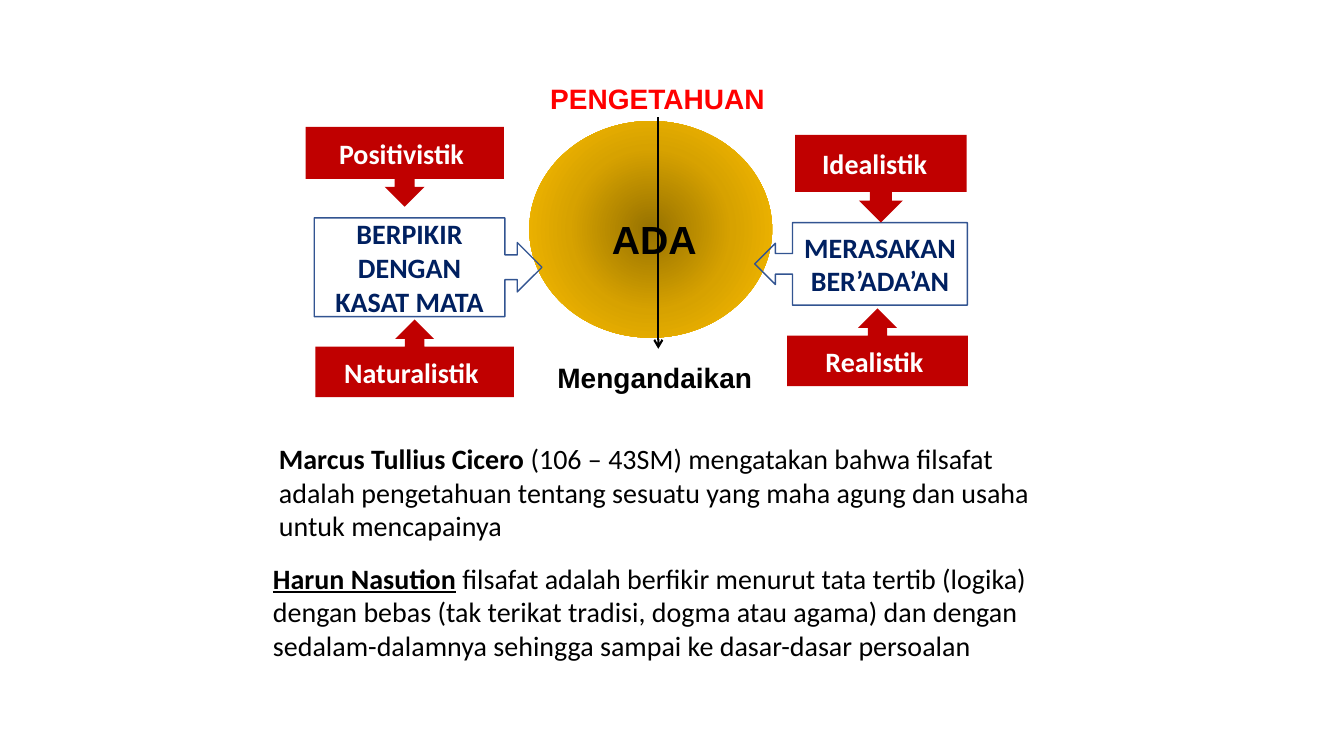
from lxml import etree
from pptx import Presentation
from pptx.dml.color import RGBColor
from pptx.enum.shapes import MSO_CONNECTOR, MSO_SHAPE
from pptx.enum.text import MSO_ANCHOR, PP_ALIGN
from pptx.oxml.ns import qn
from pptx.util import Cm, Pt

UP, DOWN = MSO_SHAPE.UP_ARROW_CALLOUT, MSO_SHAPE.DOWN_ARROW_CALLOUT
LEFT, RIGHT = MSO_SHAPE.LEFT_ARROW_CALLOUT, MSO_SHAPE.RIGHT_ARROW_CALLOUT
OVAL, STRAIGHT = MSO_SHAPE.OVAL, MSO_CONNECTOR.STRAIGHT
MIDDLE = MSO_ANCHOR.MIDDLE
ALIGN_LEFT, CENTER = PP_ALIGN.LEFT, PP_ALIGN.CENTER

COLORS = {
    "black": "000000",
    "white": "FFFFFF",
    "title": "FF0000",
    "school": "C00000",
    "thought": "002060",
    "outline": "325491",
}
SUN_STOPS = [(0, "977200"), (50, "D7A200"), (100, "FFC000")]

# Boxes are left, top, width, height in centimetres.
QUOTES = [
    ((6.63, 14.02, 19.56, 2.82), "Harun Nasution",
     " filsafat adalah berfikir menurut tata tertib (logika) dengan bebas "
     "(tak terikat tradisi, dogma atau agama) dan dengan sedalam-dalamnya "
     "sehingga sampai ke dasar-dasar persoalan", True),
    ((6.78, 11, 19.56, 2.82), "Marcus Tullius Cicero",
     " (106 – 43SM) mengatakan bahwa filsafat adalah pengetahuan tentang "
     "sesuatu yang maha agung dan usaha untuk mencapainya", False),
]
SUN_BOX = (13.34, 3.05, 6.12, 5.46)
AXIS_X, AXIS_TOP, AXIS_BOTTOM = 16.59, 2.95, 8.79
LABELS = [
    ((9.8, 1.93, 13.54, 1.12), "PENGETAHUAN", 20, "title"),
    ((13.74, 8.97, 5.72, 1.12), "Mengandaikan ", 20, "black"),
    ((13.03, 5.31, 7.16, 1.45), "ADA ", 28, "black"),
]
THOUGHTS = [
    (RIGHT, (7.92, 5.49, 5.74, 2.49), "BERPIKIR DENGAN KASAT MATA", 0.837),
    (LEFT, (19.02, 5.61, 5.36, 2.08), "MERASAKAN BER’ADA’AN", 0.822),
]
SCHOOLS = [
    (UP, (19.84, 7.77, 4.55, 1.96), "Realistik "),
    (UP, (7.95, 8.05, 5, 1.96), "Naturalistik "),
    (DOWN, (7.7, 3.2, 5, 2.01), "Positivistik "),
    (DOWN, (20.04, 3.4, 4.32, 2.21), "Idealistik  "),
]


def rgb(name):
    return RGBColor.from_string(COLORS[name])


def to_cm(box):
    return [Cm(length) for length in box]


def write(shape, text, size=20, font="Calibri", color="black", bold=True,
          underline=False, align=CENTER):
    """Add a formatted run to the first paragraph of a shape."""
    shape.text_frame.word_wrap = True
    paragraph = shape.text_frame.paragraphs[0]
    paragraph.alignment = align
    run = paragraph.add_run()
    run.text = text
    run.font.size = Pt(size)
    run.font.name = font
    run.font.bold = bold
    run.font.underline = underline
    run.font.color.rgb = rgb(color)


def add_plain_shape(slide, kind, box, fill=None, line=None):
    shape = slide.shapes.add_shape(kind, *to_cm(box))
    shape.shadow.inherit = False
    shape.text_frame.vertical_anchor = MIDDLE
    if fill:
        shape.fill.solid()
        shape.fill.fore_color.rgb = rgb(fill)
    else:
        shape.fill.background()
    if line:
        shape.line.color.rgb = rgb(line)
        shape.line.width = Pt(1)
    else:
        shape.line.fill.background()
    return shape


def add_sun(slide):
    """Draw the ellipse with a gradient that spreads from its centre."""
    sun = add_plain_shape(slide, OVAL, SUN_BOX)
    sun.fill.gradient()
    gradient = sun._element.spPr.find(qn("a:gradFill"))
    for child in list(gradient):
        gradient.remove(child)
    stops = etree.SubElement(gradient, qn("a:gsLst"))
    for percent, color in SUN_STOPS:
        stop = etree.SubElement(stops, qn("a:gs"), pos=str(percent * 1000))
        etree.SubElement(stop, qn("a:srgbClr"), val=color)
    circle = etree.SubElement(gradient, qn("a:path"), path="circle")
    etree.SubElement(circle, qn("a:fillToRect"),
                     {side: "50000" for side in "ltrb"})


def add_axis(slide):
    ends = to_cm((AXIS_X, AXIS_TOP, AXIS_X, AXIS_BOTTOM))
    axis = slide.shapes.add_connector(STRAIGHT, *ends)
    axis.line.color.rgb = rgb("black")
    axis.line.width = Pt(1.5)
    etree.SubElement(axis.line._get_or_add_ln(), qn("a:tailEnd"), type="arrow")
    etree.SubElement(axis._element.spPr, qn("a:effectLst"))


def main():
    deck = Presentation()
    deck.slide_width, deck.slide_height = Cm(33.87), Cm(19.05)
    slide = deck.slides.add_slide(deck.slide_layouts[6])

    for box, author, saying, underlined in QUOTES:
        quote = slide.shapes.add_textbox(*to_cm(box))
        write(quote, author, underline=underlined, align=ALIGN_LEFT)
        write(quote, saying, bold=False, align=ALIGN_LEFT)

    add_sun(slide)
    add_axis(slide)
    for box, text, size, color in LABELS:
        label = slide.shapes.add_textbox(*to_cm(box))
        write(label, text, size=size, font="Arial", color=color)

    for kind, box, text, body_share in THOUGHTS:
        thought = add_plain_shape(slide, kind, box, line="outline")
        thought.adjustments[3] = body_share
        write(thought, text, color="thought")
    for kind, box, text in SCHOOLS:
        school = add_plain_shape(slide, kind, box, fill="school")
        write(school, text, color="white")

    deck.save("out.pptx")


if __name__ == "__main__":
    main()
